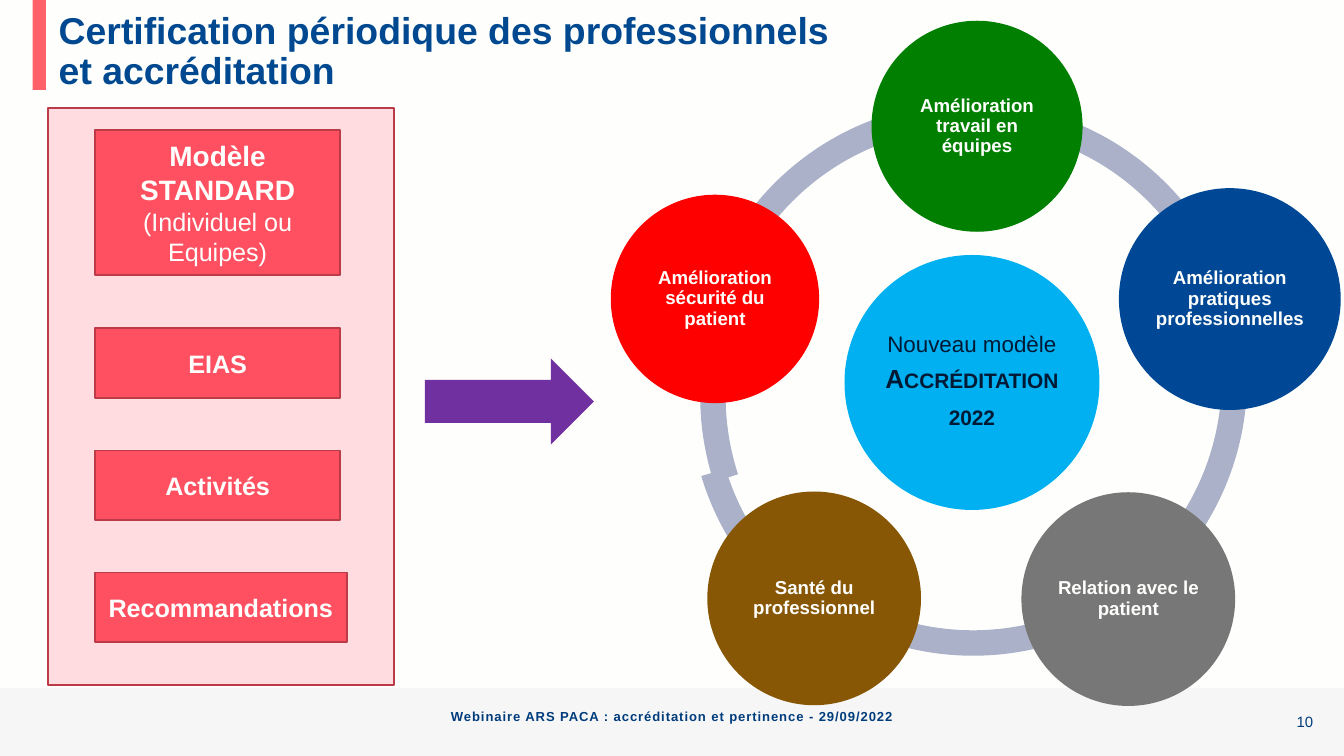
"""Build the slide on periodic certification and the accreditation model."""
from pptx import Presentation
from pptx.dml.color import RGBColor
from pptx.enum.shapes import MSO_SHAPE
from pptx.enum.text import MSO_ANCHOR, PP_ALIGN
from pptx.util import Pt

RECTANGLE, ELLIPSE = MSO_SHAPE.RECTANGLE, MSO_SHAPE.OVAL
ARC, ARROW = MSO_SHAPE.BLOCK_ARC, MSO_SHAPE.RIGHT_ARROW
TOP, MIDDLE, BOTTOM = MSO_ANCHOR.TOP, MSO_ANCHOR.MIDDLE, MSO_ANCHOR.BOTTOM
LEFT, CENTER, RIGHT = PP_ALIGN.LEFT, PP_ALIGN.CENTER, PP_ALIGN.RIGHT

WHITE = RGBColor(0xFE, 0xFF, 0xFD)
FOOTER_GRAY = RGBColor(0xF6, 0xF6, 0xF6)
CORAL = RGBColor(0xFF, 0x61, 0x68)
TITLE_BLUE = RGBColor(0x00, 0x49, 0x90)
FOOTER_BLUE = RGBColor(0x00, 0x3C, 0x7C)
PALE_PINK = RGBColor(0xFF, 0xDC, 0xDF)
PINK = RGBColor(0xFE, 0x50, 0x61)
DARK_RED = RGBColor(0xBC, 0x3B, 0x48)
RING_GRAY = RGBColor(0xAB, 0xB1, 0xC8)
SKY = RGBColor(0x00, 0xB0, 0xF0)
INK = RGBColor(0x00, 0x1A, 0x36)
GREEN = RGBColor(0x00, 0x7F, 0x00)
NAVY = RGBColor(0x00, 0x48, 0x95)
GRAY = RGBColor(0x77, 0x77, 0x77)
BROWN = RGBColor(0x88, 0x57, 0x06)
RED = RGBColor(0xFF, 0x00, 0x00)
PURPLE = RGBColor(0x70, 0x30, 0xA0)

RING_SIZE = 296.6
RING_ARCS = [
    (369.4, 64.1, 120.75, 163.28),
    (373, 54.7, 75.58, 118.37),
    (372.2, 54.7, 32.81, 75.42),
    (371.5, 54.7, 205.63, 32.65),
    (375.1, 64.1, 161.96, 203.22),
]
GOALS = [
    (467.3, 11.5, 112.3, GREEN, GREEN, "Amélioration travail en équipes"),
    (599.8, 101.2, 118.1, NAVY, NAVY, "Amélioration pratiques professionnelles"),
    (547.2, 263.7, 114.5, GRAY, None, "Relation avec le patient"),
    (378.9, 263.3, 114.5, BROWN, None, "Santé du professionnel"),
    (327.6, 104.7, 110.9, RED, RED, "Amélioration sécurité du patient"),
]
REQUIREMENTS = [("EIAS", 51.1, 131), ("Activités", 51.1, 131), ("Recommandations", 50.7, 135.2)]
REQUIREMENT_TOP, REQUIREMENT_STEP = 175.9, 65.4


class SlideBuilder:
    """Hold the font and the current slide, and draw each kind of element."""

    def __init__(self, page, font="Arial"):
        self.page = page
        self.font = font

    def shape(self, kind, left, top, width, height, fill, line=None, weight=1):
        """Draw a flat preset shape."""
        shape = self.page.shapes.add_shape(kind, Pt(left), Pt(top), Pt(width), Pt(height))
        shape.shadow.inherit = False
        shape.fill.solid()
        shape.fill.fore_color.rgb = fill
        if line is None:
            shape.line.fill.background()
        else:
            shape.line.color.rgb = line
            shape.line.width = Pt(weight)
        return shape

    def arc(self, left, top, start, end):
        """Draw one segment of the ring between two angles in degrees."""
        arc = self.shape(ARC, left, top, RING_SIZE, RING_SIZE, RING_GRAY)
        for index, value in enumerate((start * 0.6, end * 0.6, 0.046)):
            arc.adjustments[index] = value

    def box(self, left, top, width, height):
        """Add an empty text box."""
        return self.page.shapes.add_textbox(Pt(left), Pt(top), Pt(width), Pt(height))

    def frame(self, shape, anchor=MIDDLE, insets=(0, 0, 0, 0)):
        """Set up the text area of a shape; insets run left, top, right, bottom."""
        frame = shape.text_frame
        frame.word_wrap = True
        frame.vertical_anchor = anchor
        frame.margin_left, frame.margin_top, frame.margin_right, frame.margin_bottom = map(Pt, insets)
        return frame

    def para(self, frame, align=CENTER, spacing=None, after=None, first=True):
        """Return a styled paragraph, the first one or a new one."""
        para = frame.paragraphs[0] if first else frame.add_paragraph()
        para.alignment = align
        if spacing is not None:
            para.line_spacing = spacing
        if after is not None:
            para.space_after = Pt(after)
        return para

    def span(self, para, text, size, color, bold=True, **attributes):
        """Add a run, with optional raw character attributes."""
        span = para.add_run()
        span.text = text
        span.font.name = self.font
        span.font.size = Pt(size)
        span.font.bold = bold
        span.font.color.rgb = color
        for name, value in attributes.items():
            span.font._element.set(name, value)

    def card(self, left, top, width, height):
        """Draw a red card and return its text frame."""
        card = self.shape(RECTANGLE, left, top, width, height, PINK, DARK_RED)
        return self.frame(card, insets=(7.2, 3.6, 7.2, 3.6))

    def goal(self, left, top, size, fill, line, text):
        """Draw a labelled circle on the ring."""
        circle = self.shape(ELLIPSE, left, top, size, size, fill, line, 0.75)
        frame = self.frame(circle, insets=(0.9,) * 4)
        self.span(self.para(frame, spacing=0.9), text, 10, WHITE)


def main():
    deck = Presentation()
    deck.slide_width, deck.slide_height = Pt(720), Pt(405)
    page = deck.slides.add_slide(deck.slide_layouts[6])
    page.background.fill.solid()
    page.background.fill.fore_color.rgb = WHITE
    builder = SlideBuilder(page)

    builder.shape(RECTANGLE, 0, 368.6, 720, 36.4, FOOTER_GRAY)
    builder.shape(RECTANGLE, 17.5, 0, 7.2, 48.2, CORAL)
    title = builder.frame(builder.box(17.3, -0.7, 686.2, 45.4), TOP, (14.2, 7.2, 0, 0))
    para = builder.para(title, LEFT, 0.9)
    builder.span(para, "Certification périodique des professionnels", 20, TITLE_BLUE)
    para.add_line_break()
    builder.span(para, "et accréditation", 20, TITLE_BLUE)

    builder.shape(RECTANGLE, 25.7, 57.8, 185.4, 309, PALE_PINK, DARK_RED)
    model = builder.card(51.1, 69.6, 131, 78)
    builder.span(builder.para(model), "Modèle STANDARD", 15, WHITE)
    builder.span(builder.para(model, first=False), "(Individuel ou Equipes)", 13.5, WHITE, False)
    for index, (text, left, width) in enumerate(REQUIREMENTS):
        card = builder.card(left, REQUIREMENT_TOP + index * REQUIREMENT_STEP, width, 37.4)
        builder.span(builder.para(card), text, 13.5, WHITE)

    for segment in RING_ARCS:
        builder.arc(*segment)
    hub = builder.shape(ELLIPSE, 452.4, 136.6, 136.6, 136.6, SKY)
    frame = builder.frame(hub, insets=(1.2,) * 4)
    builder.span(builder.para(frame, spacing=0.9, after=4.2), "Nouveau modèle", 12, INK, False)
    for text in ("Accréditation", "2022"):
        para = builder.para(frame, spacing=0.9, after=5, first=False)
        builder.span(para, text, 14, INK, cap="small")
    for goal in GOALS:
        builder.goal(*goal)

    builder.shape(ARROW, 227.6, 192, 90.6, 46.2, PURPLE)
    number = builder.frame(builder.box(604.1, 367.2, 99.4, 38.9))
    builder.span(builder.para(number, RIGHT), "10", 8, FOOTER_BLUE, False)
    footer = builder.frame(builder.box(133.2, 372.2, 453.6, 15.8), BOTTOM)
    builder.span(builder.para(footer, spacing=Pt(8)),
                 "Webinaire ARS PACA : accréditation et pertinence - 29/09/2022",
                 7, FOOTER_BLUE, spc="50")
    deck.save("out.pptx")


if __name__ == "__main__":
    main()
